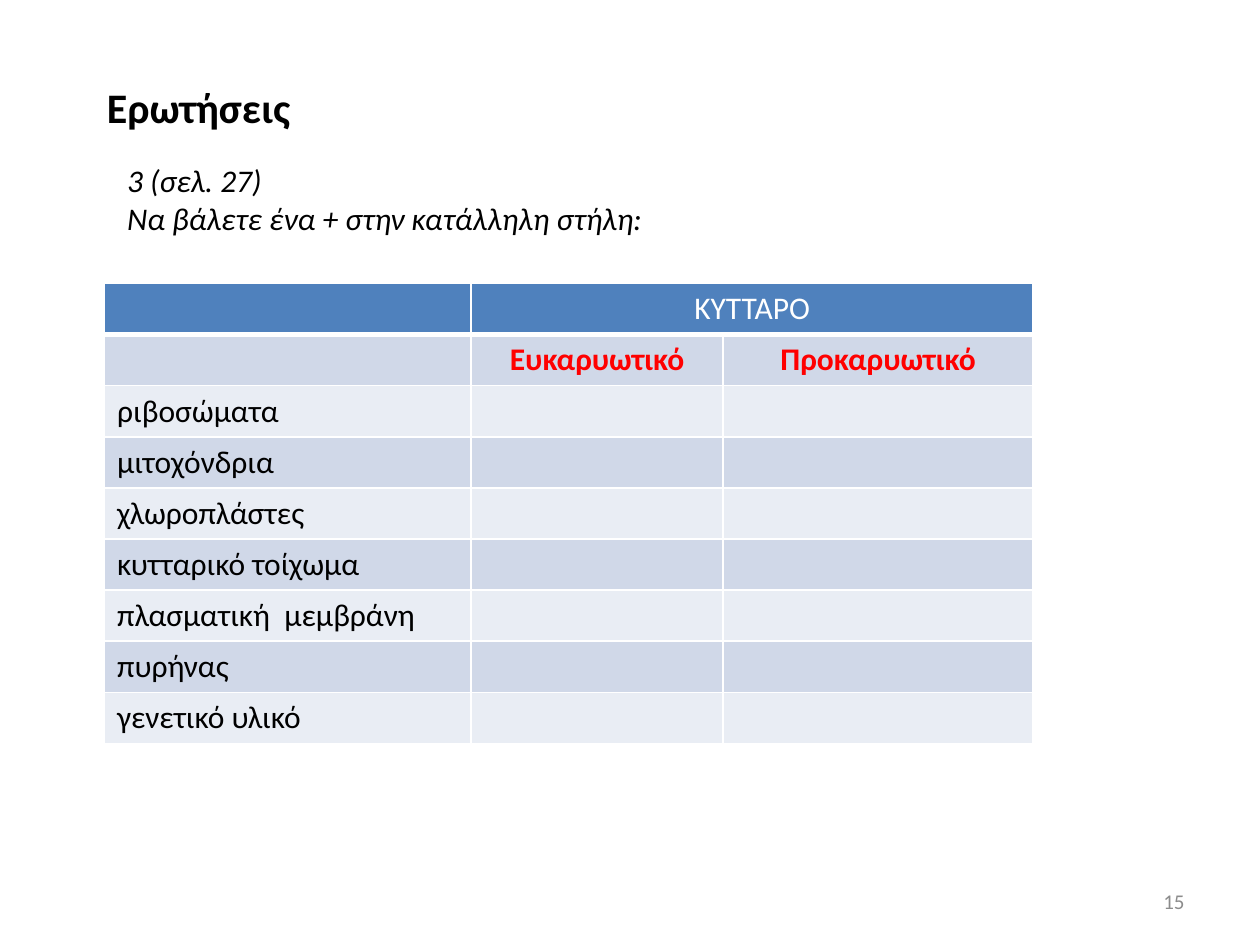
import pptx
import pptx.util
import pptx.dml.color
import pptx.enum.text
import pptx.oxml.ns
import lxml.etree

Inches, Pt = pptx.util.Inches, pptx.util.Pt
ALIGN = pptx.enum.text.PP_ALIGN
ANCHOR = pptx.enum.text.MSO_ANCHOR
COLORS = {"text": "000000", "white": "FFFFFF", "accent": "FF0000", "number": "8C8C8C",
          "header": "4F81BD", "dark": "D0D8E8", "light": "E9EDF4"}
ORGANELLES = ["ριβοσώματα", "μιτοχόνδρια", "χλωροπλάστες", "κυτταρικό τοίχωμα",
              "πλασματική  μεμβράνη", "πυρήνας", "γενετικό υλικό"]


def rgb(name):
    """Return the named palette colour."""
    return pptx.dml.color.RGBColor.from_string(COLORS[name])


def add_run(p, text, size=18, color="text", bold=False, italic=False):
    """Add one styled run to a paragraph."""
    r = p.add_run()
    r.text = text
    r.font.name = "Calibri"
    r.font.size = Pt(size)
    r.font.color.rgb = rgb(color)
    r.font.bold = bold
    r.font.italic = italic


def add_text(s, box, lines, align=ALIGN.LEFT, anchor=ANCHOR.TOP, wrap=False, **style):
    """Add a text box with one paragraph per line."""
    sp = s.shapes.add_textbox(*map(Inches, box))
    tf = sp.text_frame
    tf.word_wrap = wrap
    tf.vertical_anchor = anchor
    if not wrap:
        tf.auto_size = pptx.enum.text.MSO_AUTO_SIZE.SHAPE_TO_FIT_TEXT
    for i, line in enumerate(lines):
        p = tf.add_paragraph() if i else tf.paragraphs[0]
        p.alignment = align
        add_run(p, line, **style)


def style_cell(cell, fill, bottom):
    """Give a cell white borders and a solid fill."""
    tc_pr = cell._tc.get_or_add_tcPr()
    for side, width in (("L", 1), ("R", 1), ("T", 1), ("B", bottom)):
        ln = lxml.etree.SubElement(tc_pr, pptx.oxml.ns.qn(f"a:ln{side}"), w=str(Pt(width)))
        solid = lxml.etree.SubElement(ln, pptx.oxml.ns.qn("a:solidFill"))
        lxml.etree.SubElement(solid, pptx.oxml.ns.qn("a:srgbClr"), val=COLORS["white"])
    cell.fill.solid()
    cell.fill.fore_color.rgb = rgb(fill)


def add_cell_table(s, box):
    """Add the table that compares the two cell types."""
    rows = [["", "ΚΥΤΤΑΡΟ", ""], ["", "Ευκαρυωτικό", "Προκαρυωτικό"]]
    rows += [[name, "", ""] for name in ORGANELLES]
    table = s.shapes.add_table(len(rows), 3, *map(Inches, box)).table
    for col, width in zip(table.columns, (2.91, 2, 2.46)):
        col.width = Inches(width)
    for i, row in enumerate(rows):
        fill = "header" if i == 0 else ("light", "dark")[i % 2]
        color = ("white", "accent")[i] if i < 2 else "text"
        for j, text in enumerate(row):
            cell = table.cell(i, j)
            style_cell(cell, fill, 3 if i == 0 else 1)
            if text:
                p = cell.text_frame.paragraphs[0]
                p.alignment = ALIGN.CENTER if i < 2 else ALIGN.LEFT
                add_run(p, text, color=color, bold=i == 1)
    table.cell(0, 1).merge(table.cell(0, 2))


def main():
    """Build the question slide."""
    prs = pptx.Presentation()
    prs.slide_width, prs.slide_height = Inches(10), Inches(7.5)
    s = prs.slides.add_slide(prs.slide_layouts[6])
    add_text(s, (0.91, 1.23, 4.35, 0.71),
             ["3 (σελ. 27)", "Να βάλετε ένα + στην κατάλληλη στήλη:"], italic=True)
    add_cell_table(s, (0.83, 2.25, 7.38, 3.65))
    add_text(s, (0.75, 0.6, 1.67, 0.5), ["Ερωτήσεις"], size=24, bold=True)
    add_text(s, (7.17, 6.95, 2.33, 0.4), ["15"], align=ALIGN.RIGHT, anchor=ANCHOR.MIDDLE,
             wrap=True, size=12, color="number")
    prs.save("out.pptx")


if __name__ == "__main__":
    main()
